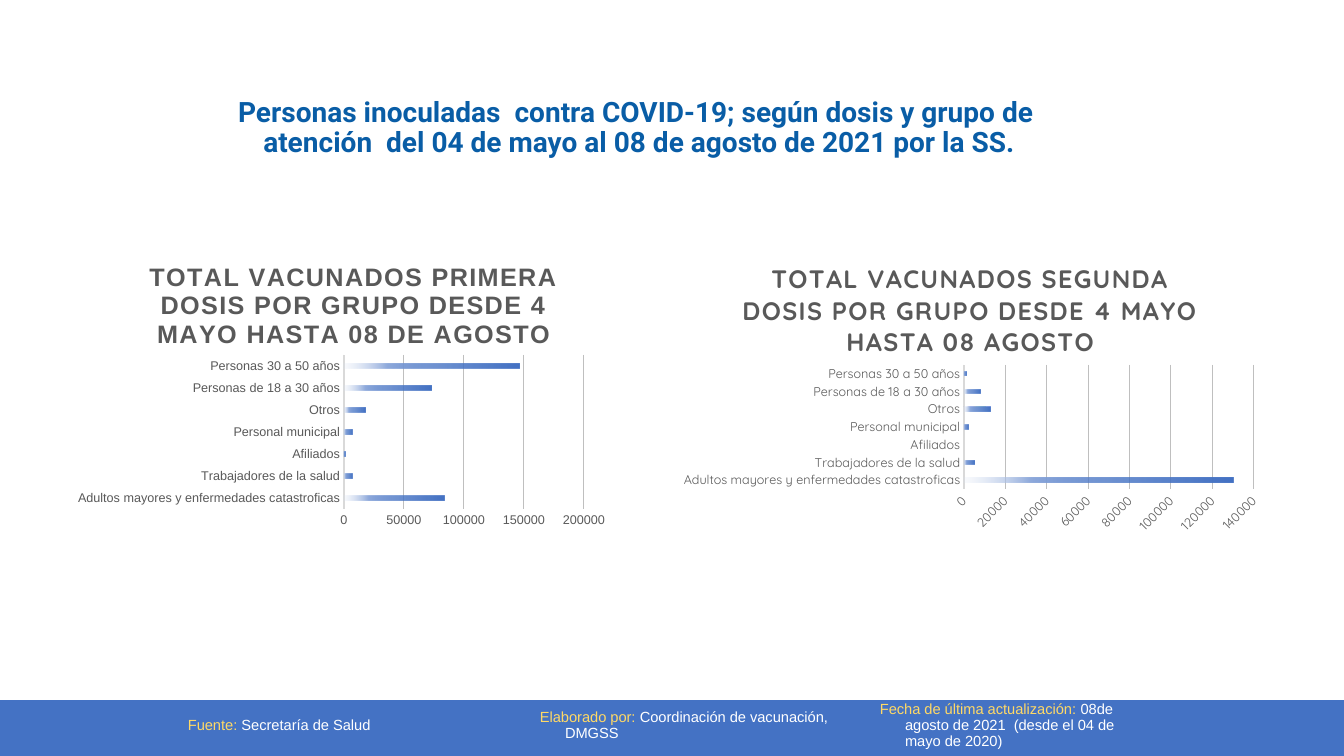
from lxml import etree
from pptx import Presentation
from pptx.chart.data import CategoryChartData
from pptx.dml.color import RGBColor
from pptx.enum.chart import XL_CHART_TYPE, XL_TICK_MARK
from pptx.enum.shapes import MSO_SHAPE
from pptx.enum.text import MSO_ANCHOR, PP_ALIGN
from pptx.oxml import parse_xml
from pptx.oxml.ns import nsdecls, qn
from pptx.util import Emu, Pt

BAR_CLUSTERED = XL_CHART_TYPE.BAR_CLUSTERED
NO_TICK = XL_TICK_MARK.NONE
RECTANGLE = MSO_SHAPE.RECTANGLE
TOP, MIDDLE = MSO_ANCHOR.TOP, MSO_ANCHOR.MIDDLE
LEFT = PP_ALIGN.LEFT

EMU_PER_PX = 914400 / 100.8
BLUE, TITLE_BLUE, YELLOW, WHITE = "4472C4", "095DA6", "FFD966", "FFFFFF"
GRAY, AXIS_GRAY, GRID_GRAY = "595959", "D9D9D9", "BFBFBF"
BAR_STOPS = [(0, BLUE, 100), (51, BLUE, 75), (75, "8FAADC", 100), (100, "DAE3F3", 15)]

GROUPS = [
    "Adultos mayores y enfermedades catastroficas",
    "Trabajadores de la salud",
    "Afiliados",
    "Personal municipal",
    "Otros",
    "Personas de 18 a 30 años",
    "Personas 30 a 50 años",
]
FIRST_DOSE = [84000, 7000, 1000, 7000, 18000, 73000, 146000]
SECOND_DOSE = [130000, 5000, 0, 2000, 13000, 8000, 1000]


def px(length):
    """Turn pixels into EMU."""
    return Emu(round(length * EMU_PER_PX))


def color(value):
    """Turn a hex string into a colour."""
    return RGBColor.from_string(value)


def style_font(font, name, size, hue, bold=False):
    """Set the face, size, colour and weight of a font."""
    font.name, font.size, font.bold = name, Pt(size), bold
    font.color.rgb = color(hue)


def add_span(para, text, **style):
    """Add a formatted span of text to a paragraph."""
    span = para.add_run()
    span.text = text
    style_font(span.font, **style)
    return span


def hanging_paragraph(box, anchor):
    """Set up a box with one left-aligned paragraph and a hanging indent."""
    frame = box.text_frame
    frame.word_wrap = True
    frame.auto_size = None
    frame.vertical_anchor = anchor
    para = frame.paragraphs[0]
    para.alignment = LEFT
    para.line_spacing = 0.9
    para.space_before = Pt(10)
    properties = para._p.get_or_add_pPr()
    properties.set("marL", "228600")
    properties.set("indent", "-228600")
    return para


def add_heading(page, text):
    """Place and fill the title of the page."""
    box = page.shapes.title
    box.left, box.top, box.width, box.height = px(228), px(93), px(930), px(83)
    para = hanging_paragraph(box, TOP)
    add_span(para, text, name="Roboto", size=20, hue=TITLE_BLUE, bold=True)


def add_footer_bar(page):
    """Draw the blue bar along the bottom."""
    bar = page.shapes.add_shape(RECTANGLE, px(0), px(700), px(1344), px(56))
    bar.shadow.inherit = False
    bar.fill.solid()
    bar.fill.fore_color.rgb = color(BLUE)
    bar.line.fill.background()


def add_footer_note(page, left, width, label, text):
    """Add a label and its text on the footer bar."""
    box = page.shapes.add_textbox(px(left), px(706), px(width), px(40))
    para = hanging_paragraph(box, MIDDLE)
    add_span(para, label, name="Arial", size=10.5, hue=YELLOW)
    add_span(para, text, name="Arial", size=10.5, hue=WHITE)


def set_layout(parent, chart_box, area, inner=False):
    """Fix a chart part at an area given in page pixels."""
    left, top, width, height = chart_box
    fractions = {"x": (area[0] - left) / width, "y": (area[1] - top) / height}
    if inner:
        fractions |= {"w": area[2] / width, "h": area[3] / height}
    for old in parent.findall(qn("c:layout")):
        parent.remove(old)
    layout = parse_xml(f"<c:layout {nsdecls('c')}><c:manualLayout/></c:layout>")
    manual = layout[0]
    settings = {"layoutTarget": "inner"} if inner else {}
    settings |= {"xMode": "edge", "yMode": "edge"}
    settings |= {key: f"{value:.4f}" for key, value in fractions.items()}
    for key, value in settings.items():
        etree.SubElement(manual, qn(f"c:{key}")).set("val", value)
    parent.insert(0 if inner else 1, layout)


def fade_bars(series):
    """Fill the bars of a series with a gradient that fades to the left."""
    stops = "".join(
        f'<a:gs pos="{place * 1000}"><a:srgbClr val="{hue}">'
        f'<a:alpha val="{alpha * 1000}"/></a:srgbClr></a:gs>'
        for place, hue, alpha in BAR_STOPS
    )
    series.format.fill.background()
    properties = series._element.find(qn("c:spPr"))
    properties.replace(properties[0], parse_xml(
        f'<a:gradFill {nsdecls("a")}><a:gsLst>{stops}</a:gsLst>'
        '<a:lin ang="10800000" scaled="0"/></a:gradFill>'
    ))


def add_dose_chart(page, title, values, box, plot_area, title_at, font, top_value, step, turn):
    """Add a bar chart of vaccinated people by group."""
    data = CategoryChartData(number_format="General")
    data.categories = GROUPS
    data.add_series("Series 1", values)
    chart = page.shapes.add_chart(BAR_CLUSTERED, *map(px, box), data).chart
    chart.has_legend = False
    style_font(chart.font, font, 10, "000000")

    chart.has_title = True
    chart.chart_title.include_in_layout = False
    para = chart.chart_title.text_frame.paragraphs[0]
    span = add_span(para, title, name=font, size=18, hue=GRAY, bold=True)
    span._r.get_or_add_rPr().set("spc", "100")
    set_layout(chart.chart_title._element, box, title_at)

    for axis in (chart.category_axis, chart.value_axis):
        axis.major_tick_mark = axis.minor_tick_mark = NO_TICK
        style_font(axis.tick_labels.font, font, 9, GRAY)
    category_line = chart.category_axis.format.line
    category_line.color.rgb, category_line.width = color(AXIS_GRAY), Pt(1.5)
    scale = chart.value_axis
    scale.minimum_scale, scale.maximum_scale, scale.major_unit = 0, top_value, step
    scale.format.line.fill.background()
    grid = scale.major_gridlines.format.line
    grid.color.rgb, grid.width = color(GRID_GRAY), Pt(0.75)
    scale._element.find(qn("c:txPr")).find(qn("a:bodyPr")).set("rot", str(turn * 60000))

    plot = chart.plots[0]
    plot.gap_width, plot.overlap, plot.vary_by_categories = 326, -58, False
    fade_bars(plot.series[0])
    set_layout(chart._chartSpace.chart.plotArea, box, plot_area, inner=True)


def main():
    """Build the deck and save it."""
    deck = Presentation()
    deck.slide_width, deck.slide_height = px(1344), px(756)
    page = deck.slides.add_slide(deck.slide_layouts[5])
    add_footer_bar(page)
    add_heading(page, "Personas inoculadas  contra COVID-19; según dosis y grupo de "
                "atención  del 04 de mayo al 08 de agosto de 2021 por la SS.")
    add_footer_note(page, 178, 327, "Fuente: ", "Secretaría de Salud")
    add_footer_note(page, 530, 327, "Elaborado por: ", "Coordinación de vacunación, DMGSS")
    add_footer_note(page, 870, 294, "Fecha de última actualización: ",
                    "08de agosto de 2021  (desde el 04 de mayo de 2020)")
    add_dose_chart(
        page, "TOTAL VACUNADOS PRIMERA DOSIS POR GRUPO DESDE 4 MAYO HASTA 08 DE AGOSTO",
        FIRST_DOSE, box=(68, 238, 548, 296), plot_area=(344, 355, 240, 154),
        title_at=(145, 256), font="Arial", top_value=200000, step=50000, turn=0)
    add_dose_chart(
        page, "TOTAL VACUNADOS SEGUNDA DOSIS POR GRUPO DESDE 4 MAYO HASTA 08 AGOSTO",
        SECOND_DOSE, box=(671, 238, 602, 301), plot_area=(964, 365, 290, 124),
        title_at=(738, 256), font="Quicksand", top_value=140000, step=20000, turn=-45)
    deck.save("out.pptx")


if __name__ == "__main__":
    main()
